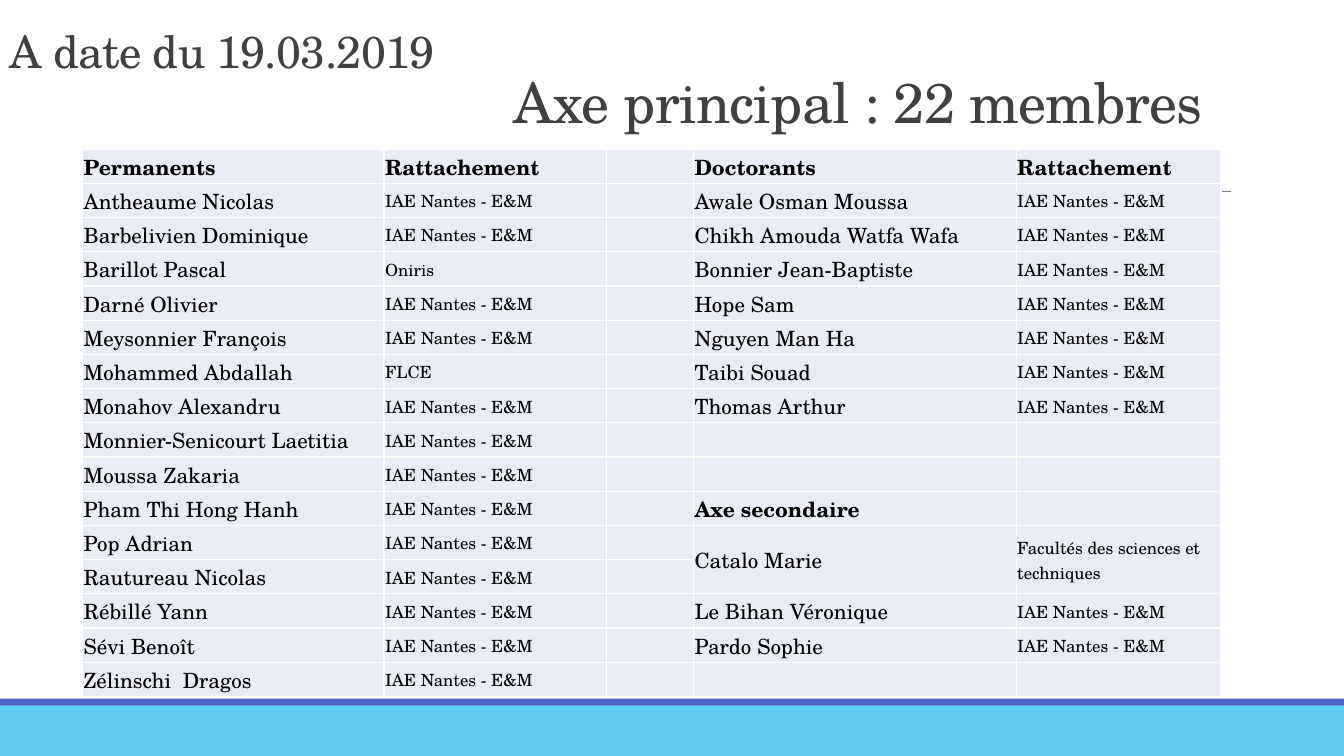
"""Build the slide listing the members of the main and secondary axes."""
from typing import NamedTuple

from lxml import etree
from pptx import Presentation, util as u
from pptx.dml.color import RGBColor
from pptx.enum import shapes, text
from pptx.oxml import ns

WIDE, HIGH = u.Inches(13.33), u.Inches(7.5)
FACE = "TeX Gyre Schola"
HUES = {"sky": "5ECCF3", "blue": "4E67C8", "rule": "808080", "title": "404040",
        "ink": "000000", "cell": "E9EBF5", "edge": "FFFFFF"}
HOME = "IAE Nantes - E&M"
COLS = (22.43, 16.58, 6.45, 24.01, 15.23)
ROW = 4.53


class Bar(NamedTuple):
    """A footer band, as percent of the slide height."""
    top: float
    high: float
    hue: str


class Line(NamedTuple):
    """A title line with its size in points and indent in percent."""
    words: str
    size: int
    indent: float


class Entry(NamedTuple):
    """A member and the unit they belong to."""
    name: str
    unit: str = HOME
    bold: bool = False
    span: int = 1


BARS = (Bar(93.33, 6.67, "sky"), Bar(92.4, 0.93, "blue"))
TITLE = (Line("A date du 19.03.2019", 32, 0),
         Line("Axe principal : 22 membres", 40, 37.5))
STAFF = (
    Entry("Permanents", "Rattachement", True),
    Entry("Antheaume Nicolas"), Entry("Barbelivien Dominique"),
    Entry("Barillot Pascal", "Oniris"), Entry("Darné Olivier"),
    Entry("Meysonnier François"), Entry("Mohammed Abdallah", "FLCE"),
    Entry("Monahov Alexandru"), Entry("Monnier-Senicourt Laetitia"),
    Entry("Moussa Zakaria"), Entry("Pham Thi Hong Hanh"), Entry("Pop Adrian"),
    Entry("Rautureau Nicolas"), Entry("Rébillé Yann"), Entry("Sévi Benoît"),
    Entry("Zélinschi  Dragos"),
)
BLANK = Entry("", "")
PUPILS = (
    Entry("Doctorants", "Rattachement", True),
    Entry("Awale Osman Moussa"), Entry("Chikh Amouda Watfa Wafa"),
    Entry("Bonnier Jean-Baptiste"), Entry("Hope Sam"), Entry("Nguyen Man Ha"),
    Entry("Taibi Souad"), Entry("Thomas Arthur"), BLANK, BLANK,
    Entry("Axe secondaire", "", True),
    Entry("Catalo Marie", "Facultés des sciences et techniques", span=2), BLANK,
    Entry("Le Bihan Véronique"), Entry("Pardo Sophie"), BLANK,
)


def across(part: float) -> int:
    """Turn a percent of the slide width into a length."""
    return round(WIDE * part / 100)


def down(part: float) -> int:
    """Turn a percent of the slide height into a length."""
    return round(HIGH * part / 100)


def tint(hue: str) -> RGBColor:
    """Look up a named colour."""
    return RGBColor.from_string(HUES[hue])


def apply(thing, looks: dict) -> None:
    """Set every attribute in a dict of format values."""
    for key, value in looks.items():
        setattr(thing, key, value)


def write(para, words: str, size: int, hue: str, bold: bool = False):
    """Add a formatted run to a paragraph."""
    run = para.add_run()
    run.text = words
    apply(run.font, {"name": FACE, "size": u.Pt(size), "bold": bold})
    run.font.color.rgb = tint(hue)
    return run


def draw_bar(slide, bar: Bar) -> None:
    """Draw one footer band."""
    box = slide.shapes.add_shape(shapes.MSO_SHAPE.RECTANGLE, 0, down(bar.top),
                                 WIDE, down(bar.high))
    box.shadow.inherit = False
    box.fill.solid()
    box.fill.fore_color.rgb = tint(bar.hue)
    box.line.fill.background()


def draw_rule(slide) -> None:
    """Draw the thin rule behind the table."""
    rule = slide.shapes.add_connector(shapes.MSO_CONNECTOR.STRAIGHT, across(9.83),
                                      down(25.33), across(91.6), down(25.33))
    rule.line.width = u.Pt(0.5)
    rule.line.color.rgb = tint("rule")
    etree.SubElement(rule.element.spPr, ns.qn("a:effectLst"))


def draw_title(slide) -> None:
    """Draw the two title lines."""
    box = slide.shapes.add_textbox(0, down(1.73), across(97.37), down(16.8))
    frame = box.text_frame
    apply(frame, {"word_wrap": True, "vertical_anchor": text.MSO_ANCHOR.BOTTOM})
    for spot, line in enumerate(TITLE):
        para = frame.add_paragraph() if spot else frame.paragraphs[0]
        para.line_spacing = 0.85
        run = write(para, line.words, line.size, "title")
        run.font._element.set("spc", "-50")
        para._p.get_or_add_pPr().set("marL", str(across(line.indent)))


def edge(cell) -> None:
    """Give a cell thin borders on all four sides."""
    props = cell._tc.get_or_add_tcPr()
    for spot, side in enumerate(("lnL", "lnR", "lnT", "lnB")):
        line = etree.Element(ns.qn(f"a:{side}"), w=str(u.Pt(1)))
        fill = etree.SubElement(line, ns.qn("a:solidFill"))
        etree.SubElement(fill, ns.qn("a:srgbClr"), val=HUES["edge"])
        props.insert(spot, line)


def fill_cell(cell, words: str, size: int, bold: bool) -> None:
    """Format a cell and write its text."""
    inset = u.Inches(0.01)
    apply(cell, {"margin_left": inset, "margin_right": inset, "margin_top": inset,
                 "margin_bottom": 0, "vertical_anchor": text.MSO_ANCHOR.MIDDLE})
    cell.fill.solid()
    cell.fill.fore_color.rgb = tint("cell")
    edge(cell)
    para = cell.text_frame.paragraphs[0]
    if words:
        write(para, words, size, "ink", bold)
    else:
        etree.SubElement(para._p, ns.qn("a:endParaRPr"), sz=str(size * 100))


def draw_table(slide) -> None:
    """Draw the table of staff and students."""
    count = len(STAFF)
    grid = slide.shapes.add_table(count, len(COLS), across(6.15), down(19.73),
                                  across(sum(COLS)), down(ROW * count)).table
    apply(grid, {"first_row": False, "horz_banding": False})
    for col, part in zip(grid.columns, COLS):
        col.width = across(part)
    for row, (left, right) in enumerate(zip(STAFF, PUPILS)):
        grid.rows[row].height = down(ROW)
        fill_cell(grid.cell(row, 2), "", 12, False)
        for start, entry in ((0, left), (3, right)):
            small = 15 if entry.bold else 12
            fill_cell(grid.cell(row, start), entry.name, 15, entry.bold)
            fill_cell(grid.cell(row, start + 1), entry.unit, small, entry.bold)
    for row, entry in enumerate(PUPILS):
        if entry.span > 1:
            for col in (3, 4):
                grid.cell(row, col).merge(grid.cell(row + entry.span - 1, col))


def main() -> None:
    """Build and save the deck."""
    deck = Presentation()
    apply(deck, {"slide_width": WIDE, "slide_height": HIGH})
    slide = deck.slides.add_slide(deck.slide_layouts[6])
    for bar in BARS:
        draw_bar(slide, bar)
    draw_rule(slide)
    draw_title(slide)
    draw_table(slide)
    deck.save("out.pptx")


if __name__ == "__main__":
    main()
